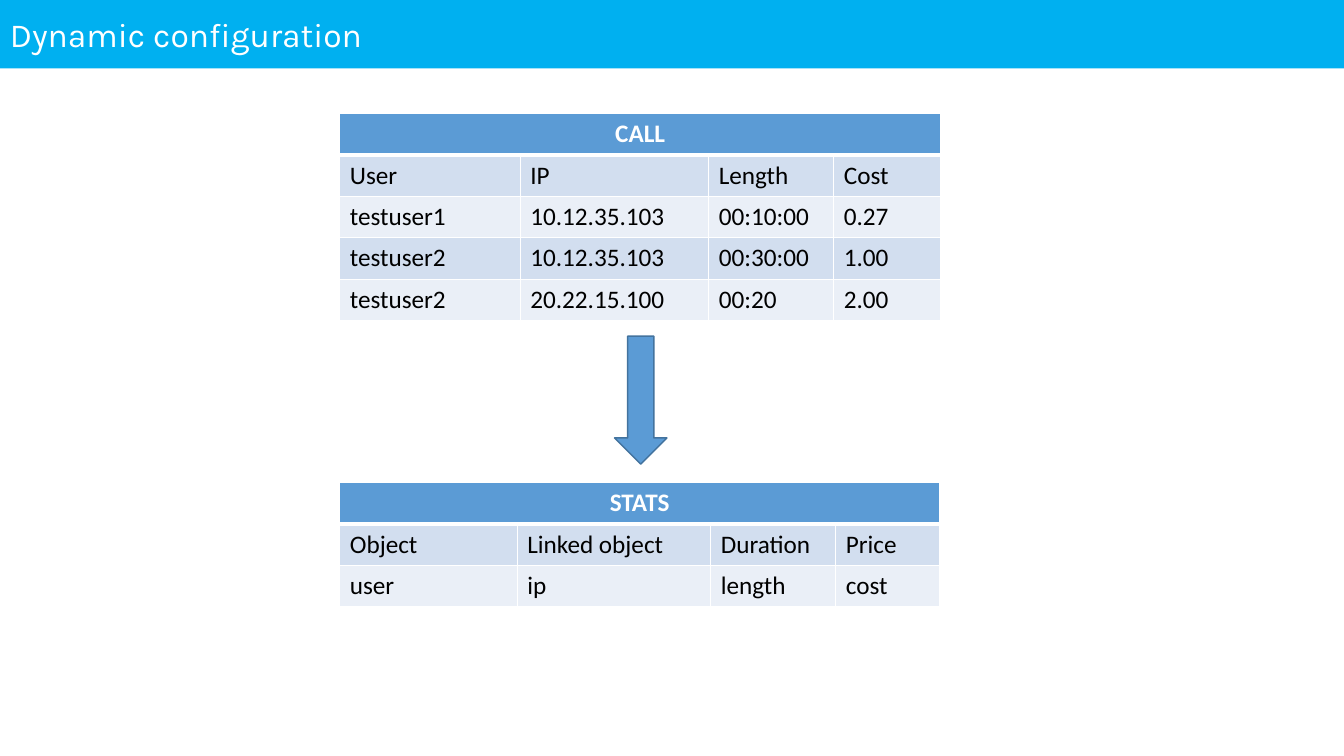
"""Build the dynamic configuration slide: a call table mapped to a stats table."""
from lxml import etree
from pptx import Presentation
from pptx.dml.color import RGBColor
from pptx.enum import shapes, text
from pptx.oxml import ns
from pptx.util import Inches, Pt

WHITE = RGBColor(0xFF, 0xFF, 0xFF)
BLACK = RGBColor(0x00, 0x00, 0x00)
BANNER = RGBColor(0x00, 0xB0, 0xF0)
BLUE = RGBColor(0x5B, 0x9B, 0xD5)
OUTLINE = RGBColor(0x43, 0x73, 0x9E)
BANDS = [RGBColor(0xEA, 0xEF, 0xF7), RGBColor(0xD2, 0xDE, 0xEF)]

TABLES = [
    (1.13, "CALL", [1.79, 1.87, 1.24, 1.06], [
        ["User", "IP", "Length", "Cost"],
        ["testuser1", "10.12.35.103", "00:10:00", "0.27"],
        ["testuser2", "10.12.35.103", "00:30:00", "1.00"],
        ["testuser2", "20.22.15.100", "00:20", "2.00"],
    ]),
    (4.79, "STATS", [1.76, 1.92, 1.24, 1.03], [
        ["Object", "Linked object", "Duration", "Price"],
        ["user", "ip", "length", "cost"],
    ]),
]
ROW_HEIGHT = 0.41


def set_borders(cell, top, bottom):
    tcPr = cell._tc.get_or_add_tcPr()
    for side, points in (("L", 1), ("R", 1), ("T", top), ("B", bottom)):
        ln = etree.SubElement(tcPr, ns.qn(f"a:ln{side}"), w=str(Pt(points)))
        fill = etree.SubElement(ln, ns.qn("a:solidFill"))
        etree.SubElement(fill, ns.qn("a:srgbClr"), val=str(WHITE))


prs = Presentation()
prs.slide_width, prs.slide_height = Inches(13.33), Inches(7.5)
s = prs.slides.add_slide(prs.slide_layouts[6])

banner = s.shapes.add_shape(shapes.MSO_SHAPE.RECTANGLE, 0, 0, prs.slide_width, Inches(0.68))
banner.shadow.inherit = False
banner.fill.solid()
banner.fill.fore_color.rgb = BANNER
banner.line.fill.background()
tf = banner.text_frame
tf.vertical_anchor = text.MSO_ANCHOR.MIDDLE
p = tf.paragraphs[0]
p.text = "Dynamic configuration"
p.alignment = text.PP_ALIGN.LEFT
p.font.name, p.font.size = "Karla", Pt(24)
p.font.color.rgb = WHITE

arrow = s.shapes.add_shape(
    shapes.MSO_SHAPE.RIGHT_ARROW, Inches(5.72), Inches(3.71), Inches(1.27), Inches(0.52))
arrow.rotation = 90
arrow.shadow.inherit = False
arrow.fill.solid()
arrow.fill.fore_color.rgb = BLUE
arrow.line.color.rgb = OUTLINE
arrow.line.width = Pt(1)

for top, title, widths, body in TABLES:
    rows = [[title, "", "", ""]] + body
    table = s.shapes.add_table(
        len(rows), len(widths), Inches(3.37), Inches(top),
        Inches(sum(widths)), Inches(ROW_HEIGHT * len(rows))).table
    for column, width in zip(table.columns, widths):
        column.width = Inches(width)
    for i, values in enumerate(rows):
        table.rows[i].height = Inches(ROW_HEIGHT)
        header = i == 0
        for j, value in enumerate(values):
            cell = table.cell(i, j)
            set_borders(cell, 3 if i == 1 else 1, 3 if header else 1)
            cell.fill.solid()
            cell.fill.fore_color.rgb = BLUE if header else BANDS[i % 2]
            p = cell.text_frame.paragraphs[0]
            p.text = value
            p.alignment = text.PP_ALIGN.CENTER if header else text.PP_ALIGN.LEFT
            p.font.name, p.font.size, p.font.bold = "Calibri", Pt(18), header
            p.font.color.rgb = WHITE if header else BLACK
    table.cell(0, 0).merge(table.cell(0, len(widths) - 1))

prs.save("out.pptx")
